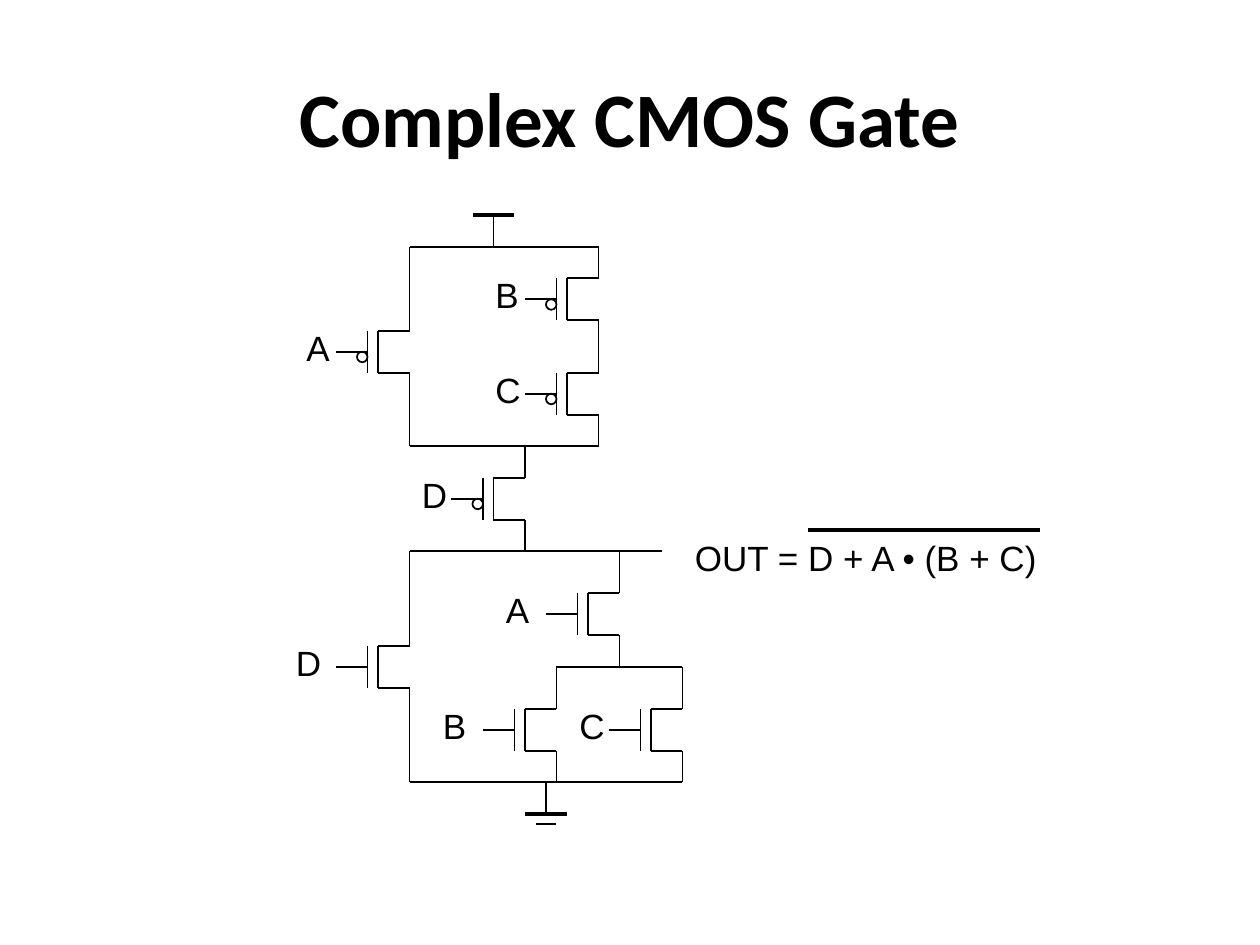
from dataclasses import dataclass

from lxml.etree import SubElement
from pptx import Presentation
from pptx.dml.color import RGBColor
from pptx.enum.shapes import MSO_CONNECTOR as Cxn, MSO_SHAPE as Shape
from pptx.enum.text import MSO_ANCHOR as Anchor, MSO_AUTO_SIZE as AutoSize, PP_ALIGN as Align
from pptx.oxml.ns import qn
from pptx.util import Pt


@dataclass(frozen=True)
class Theme:
    ink: RGBColor = RGBColor(0, 0, 0)
    title_font: str = "Calibri"
    label_font: str = "Arial"
    title_size: float = 44
    label_size: float = 20
    thin: float = 1
    thick: float = 2.25


@dataclass(frozen=True)
class Transistor:
    """x is the source/drain column, y the top of the channel."""
    label: str
    x: float
    y: float
    pmos: bool = False
    label_gap: float = 72


@dataclass(frozen=True)
class Wire:
    x1: float
    y1: float
    x2: float
    y2: float
    thick: bool = False


THEME = Theme()
CHANNEL, STUB = 24, 18      # channel height, lead beyond the channel
BUBBLE = 6

TRANSISTORS = [
    Transistor("A", 234, 189, True, 66),
    Transistor("B", 342, 159, True, 66),
    Transistor("C", 342, 213, True, 66),
    Transistor("D", 300, 273, True, 66),
    Transistor("A", 354, 339),
    Transistor("D", 234, 369),
    Transistor("B", 318, 405),
    Transistor("C", 390, 405, label_gap=66),
]

WIRES = [
    # Supply and pull-up network
    Wire(270, 123, 294, 123, thick=True),
    Wire(282, 123, 282, 141),
    Wire(234, 141, 342, 141),
    Wire(234, 141, 234, 177),
    Wire(234, 225, 234, 255),
    Wire(234, 255, 342, 255),
    # Output node and pull-down network
    Wire(234, 315, 378, 315),
    Wire(234, 315, 234, 369),
    Wire(354, 315, 354, 339),
    Wire(318, 381, 390, 381),
    Wire(318, 381, 318, 405),
    Wire(390, 381, 390, 405),
    Wire(234, 393, 234, 447),
    Wire(234, 447, 390, 447),
    # Ground
    Wire(312, 447, 312, 465),
    Wire(300, 465, 324, 465, thick=True),
    Wire(306, 471, 318, 471),
    # Bar over the output expression
    Wire(462, 303, 594, 303, thick=True),
]


def draw_wire(shapes, wire: Wire) -> None:
    line = shapes.add_connector(
        Cxn.STRAIGHT, Pt(wire.x1), Pt(wire.y1), Pt(wire.x2), Pt(wire.y2))
    line.line.color.rgb = THEME.ink
    line.line.width = Pt(THEME.thick if wire.thick else THEME.thin)
    SubElement(line._element.spPr, qn("a:effectLst"))


def draw_label(shapes, text: str, x: float, y: float, width: float = 28.5) -> None:
    tf = shapes.add_textbox(Pt(x), Pt(y), Pt(width), Pt(31)).text_frame
    tf.word_wrap = False
    tf.auto_size = AutoSize.SHAPE_TO_FIT_TEXT
    p = tf.paragraphs[0]
    p.text = text
    p.font.name = THEME.label_font
    p.font.size = Pt(THEME.label_size)
    p.font.color.rgb = THEME.ink


def draw_bubble(shapes, x: float, y: float) -> None:
    sp = shapes.add_shape(Shape.OVAL, Pt(x), Pt(y), Pt(BUBBLE), Pt(BUBBLE))
    sp.shadow.inherit = False
    sp.fill.background()
    sp.line.color.rgb = THEME.ink
    sp.line.width = Pt(THEME.thin)


def draw_transistor(shapes, t: Transistor) -> None:
    group = shapes.add_group_shape().shapes
    body, gate, lead = t.x - 18, t.x - 24, t.x - 42
    middle, bottom = t.y + CHANNEL / 2, t.y + CHANNEL
    parts = [
        Wire(body, t.y, t.x, t.y),
        Wire(body, t.y, body, bottom),
        Wire(body, bottom, t.x, bottom),
        Wire(gate, t.y, gate, bottom),
        Wire(t.x, bottom, t.x, bottom + STUB),
        Wire(lead, middle, gate, middle),
    ]
    if t.pmos:
        parts.append(Wire(t.x, t.y - STUB, t.x, t.y))
        draw_bubble(group, gate - BUBBLE, middle)
    for part in parts:
        draw_wire(group, part)
    draw_label(group, t.label, t.x - t.label_gap, t.y - 6)


def format_title(title, text: str) -> None:
    title.left, title.top, title.width, title.height = Pt(36), Pt(21.6), Pt(648), Pt(90)
    tf = title.text_frame
    tf.vertical_anchor = Anchor.MIDDLE
    p = tf.paragraphs[0]
    p.text = text
    p.alignment = Align.CENTER
    p.font.name = THEME.title_font
    p.font.size = Pt(THEME.title_size)
    p.font.bold = True
    p.font.color.rgb = THEME.ink


def main() -> None:
    prs = Presentation()
    prs.slide_width, prs.slide_height = Pt(720), Pt(540)
    s = prs.slides.add_slide(prs.slide_layouts[5])
    format_title(s.shapes.title, "Complex CMOS Gate")
    for transistor in TRANSISTORS:
        draw_transistor(s.shapes, transistor)
    for wire in WIRES:
        draw_wire(s.shapes, wire)
    draw_label(s.shapes, "OUT = D + A • (B + C)", 390, 303, 211.7)
    prs.save("out.pptx")


if __name__ == "__main__":
    main()
